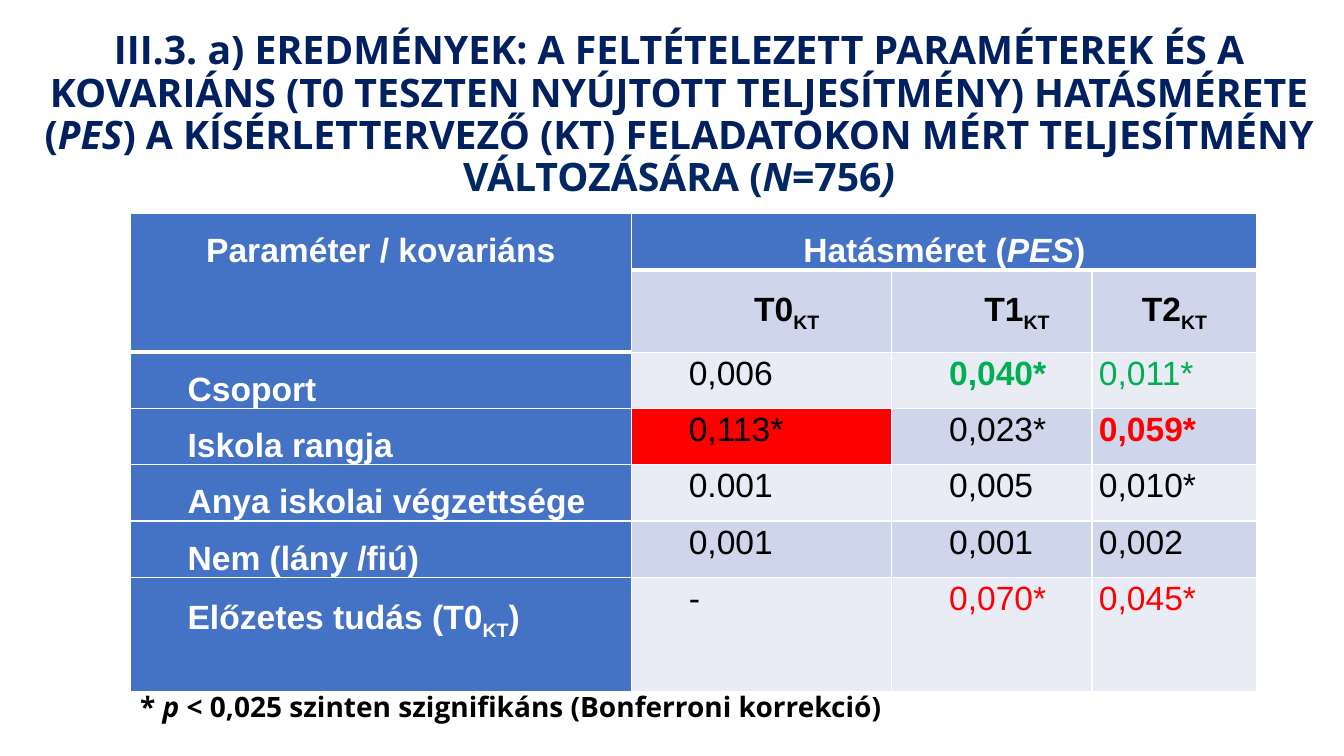
from dataclasses import dataclass
from typing import Optional, Union

from lxml import etree
from pptx import Presentation
from pptx import util as u
from pptx.dml.color import RGBColor
from pptx.enum import text as t
from pptx.oxml.ns import qn

COLORS = {
    "white": "FFFFFF", "black": "000000", "navy": "002060", "deep_navy": "012863",
    "blue": "4472C4", "band_dark": "CFD5EA", "band_light": "E9EBF5",
    "red": "FF0000", "green": "00B050",
}
INDENT = 36
COLUMN_WIDTHS = [358, 186, 143, 118]
ROW_HEIGHTS = [33, 59, 33, 33, 33, 33, 82]


@dataclass
class Span:
    text: str
    italic: bool = False
    subscript: bool = False
    color: Optional[str] = None


Spans = list[Union[str, Span]]


@dataclass
class Value:
    text: str
    color: str = "black"
    bold: bool = False
    fill: Optional[str] = None


@dataclass
class Parameter:
    name: Spans
    values: list[Value]


KT = Span("KT", subscript=True)
PES = Span("PES", italic=True)
TITLE: Spans = [
    "III.3. a) EREDMÉNYEK: A FELTÉTELEZETT PARAMÉTEREK ÉS A KOVARIÁNS "
    "(T0 TESZTEN NYÚJTOTT TELJESÍTMÉNY) HATÁSMÉRETE (", PES,
    ") A KÍSÉRLETTERVEZŐ (KT) FELADATOKON MÉRT TELJESÍTMÉNY ",
    Span("VÁLTOZÁSÁRA (", color="deep_navy"),
    Span("N", italic=True, color="deep_navy"),
    Span("=756", color="deep_navy"),
    Span(")", italic=True, color="deep_navy"),
]
FOOTNOTE: Spans = ["* ", Span("p", italic=True),
                   " < 0,025 szinten szignifikáns (Bonferroni korrekció)"]
PARAMETERS = [
    Parameter(["Csoport"], [Value("0,006"), Value("0,040*", "green", True),
                            Value("0,011*", "green")]),
    Parameter(["Iskola rangja"], [Value("0,113*", fill="red"), Value("0,023*"),
                                  Value("0,059*", "red", True)]),
    Parameter(["Anya iskolai végzettsége"],
              [Value("0.001"), Value("0,005"), Value("0,010*")]),
    Parameter(["Nem (lány /fiú)"], [Value("0,001"), Value("0,001"), Value("0,002")]),
    Parameter(["Előzetes tudás (T0", KT, ")"],
              [Value("-"), Value("0,070*", "red"), Value("0,045*", "red")]),
]


def rgb(name: str) -> RGBColor:
    return RGBColor.from_string(COLORS[name])


def write(frame, spans: Spans, *, size: float = 24, font: str = "Arial",
          color: str = "black", bold: bool = True, align=t.PP_ALIGN.LEFT,
          spacing: Optional[float] = None, after: float = 0, indent: float = 0) -> None:
    paragraph = frame.paragraphs[0]
    paragraph.alignment = align
    paragraph.space_after = u.Pt(after)
    if spacing:
        paragraph.line_spacing = spacing
    if indent:
        properties = paragraph._p.get_or_add_pPr()
        properties.set("marL", str(u.Pt(indent)))
        properties.set("indent", "0")
    for item in spans:
        span = Span(item) if isinstance(item, str) else item
        run = paragraph.add_run()
        run.text = span.text
        run.font.size = u.Pt(size)
        run.font.name = font
        run.font.bold = bold
        run.font.italic = span.italic
        run.font.color.rgb = rgb(span.color or color)
        if span.subscript:
            run.font._element.set("baseline", "-25000")


def add_text(slide, box: tuple, spans: Spans, anchor=t.MSO_ANCHOR.TOP, **style) -> None:
    frame = slide.shapes.add_textbox(*map(u.Pt, box)).text_frame
    frame.word_wrap = True
    frame.vertical_anchor = anchor
    write(frame, spans, **style)


def style_cell(cell, fill: str, bottom: float = 1) -> None:
    """Set insets, white borders and fill."""
    cell.margin_left = cell.margin_right = u.Pt(5)
    cell.margin_top = cell.margin_bottom = 0
    properties = cell._tc.get_or_add_tcPr()
    for side, width in {"L": 1, "R": 1, "T": 1, "B": bottom}.items():
        line = etree.SubElement(properties, qn(f"a:ln{side}"), w=str(u.Pt(width)))
        solid = etree.SubElement(line, qn("a:solidFill"))
        etree.SubElement(solid, qn("a:srgbClr"), val=COLORS["white"])
    cell.fill.solid()
    cell.fill.fore_color.rgb = rgb(fill)


def add_effect_table(slide) -> None:
    holder = slide.shapes.add_table(len(ROW_HEIGHTS), len(COLUMN_WIDTHS), u.Pt(93),
                                    u.Pt(152.5), u.Pt(805), u.Pt(330.5))
    table = holder.table
    for column, width in zip(table.columns, COLUMN_WIDTHS):
        column.width = u.Pt(width)
    for row, height in zip(table.rows, ROW_HEIGHTS):
        row.height = u.Pt(height)
    table.cell(0, 0).merge(table.cell(1, 0))
    table.cell(0, 1).merge(table.cell(0, 3))

    heading = dict(align=t.PP_ALIGN.CENTER, spacing=1.5)
    for column in range(len(COLUMN_WIDTHS)):
        style_cell(table.cell(0, column), "blue", bottom=3)
        style_cell(table.cell(1, column), "band_dark" if column else "blue",
                   bottom=1 if column else 3)
    write(table.cell(0, 0).text_frame, ["Paraméter / kovariáns"], color="white", **heading)
    write(table.cell(0, 1).text_frame, ["Hatásméret (", PES, ")"],
          color="white", after=8, **heading)
    for column, test in enumerate(["T0", "T1", "T2"], start=1):
        write(table.cell(1, column).text_frame, [test, KT], after=8 if column > 1 else 0,
              indent=INDENT if column < 3 else 0, **heading)

    for row, parameter in enumerate(PARAMETERS, start=2):
        name_cell = table.cell(row, 0)
        style_cell(name_cell, "blue")
        write(name_cell.text_frame, parameter.name, color="white", spacing=1.5, indent=INDENT)
        band = "band_dark" if row % 2 else "band_light"
        for column, value in enumerate(parameter.values, start=1):
            cell = table.cell(row, column)
            style_cell(cell, value.fill or band)
            write(cell.text_frame, [value.text], color=value.color, bold=value.bold,
                  spacing=1.07, after=8, indent=INDENT if column < 3 else 0)


def main() -> None:
    deck = Presentation()
    deck.slide_width, deck.slide_height = u.Pt(960), u.Pt(540)
    slide = deck.slides.add_slide(deck.slide_layouts[6])
    add_effect_table(slide)
    add_text(slide, (10, 11, 950, 143), TITLE, t.MSO_ANCHOR.MIDDLE, size=28,
             font="Open Sans", color="navy", align=t.PP_ALIGN.CENTER, spacing=0.9)
    add_text(slide, (93, 489, 636, 31.5), FOOTNOTE, size=20, font="Open Sans",
             align=t.PP_ALIGN.JUSTIFY)
    deck.save("out.pptx")


if __name__ == "__main__":
    main()
